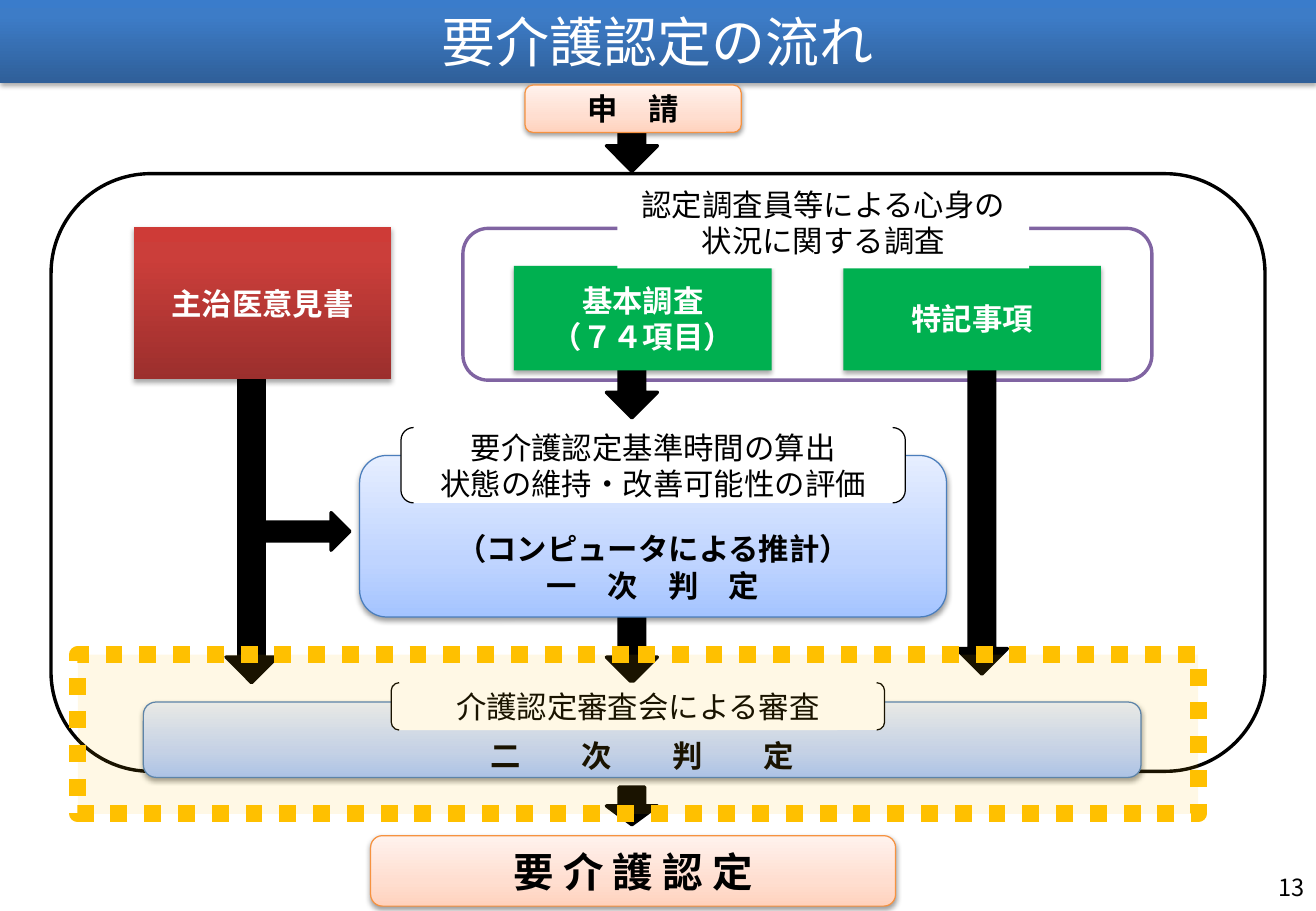
import dataclasses

import lxml.etree
import pptx
import pptx.dml.color
import pptx.enum.dml
import pptx.enum.shapes
import pptx.enum.text
import pptx.oxml.ns
import pptx.util

Inches = pptx.util.Inches
Pt = pptx.util.Pt
Kind = pptx.enum.shapes.MSO_SHAPE
Align = pptx.enum.text.PP_ALIGN
Anchor = pptx.enum.text.MSO_ANCHOR
qn = pptx.oxml.ns.qn


@dataclasses.dataclass(frozen=True)
class Theme:
    black: str = "000000"
    white: str = "FFFFFF"
    green: str = "00B050"
    purple: str = "8064A2"
    gold: str = "FFC000"
    orange: str = "F69240"
    navy: str = "4B7EBC"
    peach: tuple = ((0, "FFD2BD"), (35, "FFDED0"), (100, "FFF2ED"))
    sky: tuple = ((0, "A4C4FF"), (35, "BFD4FF"), (100, "E6EEFF"))
    red: tuple = ((0, "9C2F2D"), (80, "CB3E3A"), (100, "CE3B37"))
    blue: tuple = ((0, "2F5F99"), (80, "3D7CC7"), (100, "3A7CCB"))
    font: str = "Noto Sans CJK JP"
    latin: str = "Calibri"
    body: int = 18
    result: int = 24
    title: int = 32
    number: int = 14
    thin: float = 0.75
    thick: float = 2
    dots: float = 10


T = Theme()


def rgb(code):
    return pptx.dml.color.RGBColor.from_string(code)


def node(parent, tag, **attrs):
    return lxml.etree.SubElement(parent, qn(tag), {k: str(v) for k, v in attrs.items()})


def alpha(parent, code, share):
    node(node(parent, "a:srgbClr", val=code), "a:alpha", val=share * 1000)


def paint(shape, fill, line=None, width=T.thick, shade=None):
    props = shape._element.spPr
    if isinstance(fill, str):
        shape.fill.solid()
        shape.fill.fore_color.rgb = rgb(fill)
    else:
        shape.fill.gradient()
        grad = props.find(qn("a:gradFill"))
        for child in list(grad):
            grad.remove(child)
        stops = node(grad, "a:gsLst")
        for place, code in fill:
            node(node(stops, "a:gs", pos=place * 1000), "a:srgbClr", val=code)
        node(grad, "a:lin", ang=270 * 60000, scaled=0)
    if line:
        shape.line.color.rgb = rgb(line)
        shape.line.width = Pt(width)
    else:
        shape.line.fill.background()
    shape.shadow.inherit = False
    if shade:
        share, drop = shade
        cast = node(props.find(qn("a:effectLst")), "a:outerShdw", blurRad=Pt(3.1),
                    dist=Pt(drop), dir=90 * 60000, rotWithShape=0)
        alpha(cast, T.black, share)


def write(shape, lines, color=T.black, size=T.body, bold=False, align=Align.CENTER,
          anchor=Anchor.MIDDLE, font=T.font, foot=0.05):
    frame = shape.text_frame
    frame.word_wrap = True
    frame.auto_size = pptx.enum.text.MSO_AUTO_SIZE.NONE
    frame.vertical_anchor = anchor
    frame.margin_left = frame.margin_right = Inches(0.1)
    frame.margin_top, frame.margin_bottom = Inches(0.05), Inches(foot)
    for i, line in enumerate(lines):
        para = frame.paragraphs[0] if i == 0 else frame.add_paragraph()
        para.alignment = align
        run = para.add_run()
        run.text = line
        run.font.size, run.font.bold, run.font.name = Pt(size), bold, font
        run.font.color.rgb = rgb(color)
        node(run._r.get_or_add_rPr(), "a:ea", typeface=T.font)


def draw(slide, kind, box, fill, line=None, width=T.thick, shade=None):
    shape = slide.shapes.add_shape(kind, *map(Inches, box))
    paint(shape, fill, line, width, shade)
    return shape


def arrow(slide, x, y, h):
    draw(slide, Kind.DOWN_ARROW, (x - 0.21, y, 0.42, h), T.black, T.black)


def card(slide, box, fill, lines):
    write(draw(slide, Kind.RECTANGLE, box, fill, shade=(35, 1.8)), lines, T.white, bold=True)


def step(slide, box, fill, line, lines, **style):
    shape = draw(slide, Kind.ROUNDED_RECTANGLE, box, fill, line, T.thin, (38, 1.6))
    write(shape, lines, bold=True, **style)


def note(slide, box, lines):
    write(draw(slide, Kind.DOUBLE_BRACKET, box, T.white, T.black, T.thin), lines)


def head(slide, box):
    shape = slide.shapes.title
    shape.left, shape.top, shape.width, shape.height = map(Inches, box)
    paint(shape, T.blue, shade=(35, 1.8))
    write(shape, ["要介護認定の流れ"], T.white, T.title, font=T.latin)


def apply(slide, box, mid):
    arrow(slide, mid, box[1] + 0.24, 0.47)
    step(slide, box, T.peach, T.orange, ["申　請"])


def doctor(slide, box):
    x, y, w, h = box
    arrow(slide, x + 0.97, y + h, 2.5)
    card(slide, box, T.red, ["主治医意見書"])
    draw(slide, Kind.RIGHT_ARROW, (x + 1.02, y + 2.35, 0.76, 0.31), T.black, T.black)


def survey(slide, box, mid):
    x, y, w, h = box
    draw(slide, Kind.ROUNDED_RECTANGLE, box, T.white, T.purple)
    arrow(slide, mid, y + 1.09, 0.47)
    arrow(slide, x + 4.27, y + 1.09, 2.58)
    for i, lines in enumerate((["基本調査", "（７４項目）"], ["特記事項"])):
        card(slide, (x + 0.42 + 2.71 * i, y + 0.31, 2.12, 0.86), T.green, lines)
    label = draw(slide, Kind.RECTANGLE, (x + 1.27, y - 0.4, 3.39, 0.73), T.white)
    write(label, ["認定調査員等による心身の状況に関する調査"], anchor=Anchor.TOP)


def first(slide, box, mid):
    x, y, w, h = box
    arrow(slide, mid, y + h - 0.08, 0.62)
    step(slide, box, T.sky, T.navy, ["（コンピュータによる推計）", "一　次　判　定"],
         anchor=Anchor.BOTTOM)
    note(slide, (x + 0.34, y - 0.23, 4.15, 0.62),
         ["要介護認定基準時間の算出", "状態の維持・改善可能性の評価"])


def second(slide, box, mid):
    x, y, w, h = box
    step(slide, box, T.sky, T.navy, ["二　　次　　判　　定"], anchor=Anchor.BOTTOM, foot=0)
    note(slide, (x + 2.04, y - 0.16, 4.06, 0.39), ["介護認定審査会による審査"])
    arrow(slide, mid, y + h + 0.08, 0.31)


def focus(slide, box):
    shape = draw(slide, Kind.RECTANGLE, box, T.gold, T.gold, T.dots)
    shape.line.dash_style = pptx.enum.dml.MSO_LINE.ROUND_DOT
    props = shape._element.spPr
    props.find(qn("a:xfrm")).set("flipV", "1")
    tint = props.find(qn("a:solidFill"))
    tint.remove(tint[0])
    alpha(tint, T.gold, 10)


def number(slide, box):
    write(slide.shapes.add_textbox(*map(Inches, box)), ["13"], size=T.number, align=Align.RIGHT)


def main():
    deck = pptx.Presentation()
    deck.slide_width, deck.slide_height = Inches(10.83), Inches(7.5)
    slide = deck.slides.add_slide(deck.slide_layouts[5])
    mid = 5.2
    head(slide, (0, 0, 10.83, 0.68))
    apply(slide, (4.32, 0.7, 1.78, 0.39), mid)
    draw(slide, Kind.ROUNDED_RECTANGLE, (0.42, 1.43, 9.99, 4.92), T.white, T.black)
    doctor(slide, (1.1, 1.87, 2.12, 1.25))
    survey(slide, (3.81, 1.88, 5.67, 1.25), mid)
    first(slide, (2.96, 3.75, 4.83, 1.33), mid)
    second(slide, (1.18, 5.78, 8.21, 0.62), mid)
    step(slide, (3.05, 6.88, 4.32, 0.58), T.peach, T.orange, ["要 介 護 認 定"], size=T.result)
    focus(slide, (0.64, 5.39, 9.22, 1.31))
    number(slide, (8.31, 7.1, 2.53, 0.4))
    deck.save("out.pptx")


if __name__ == "__main__":
    main()
